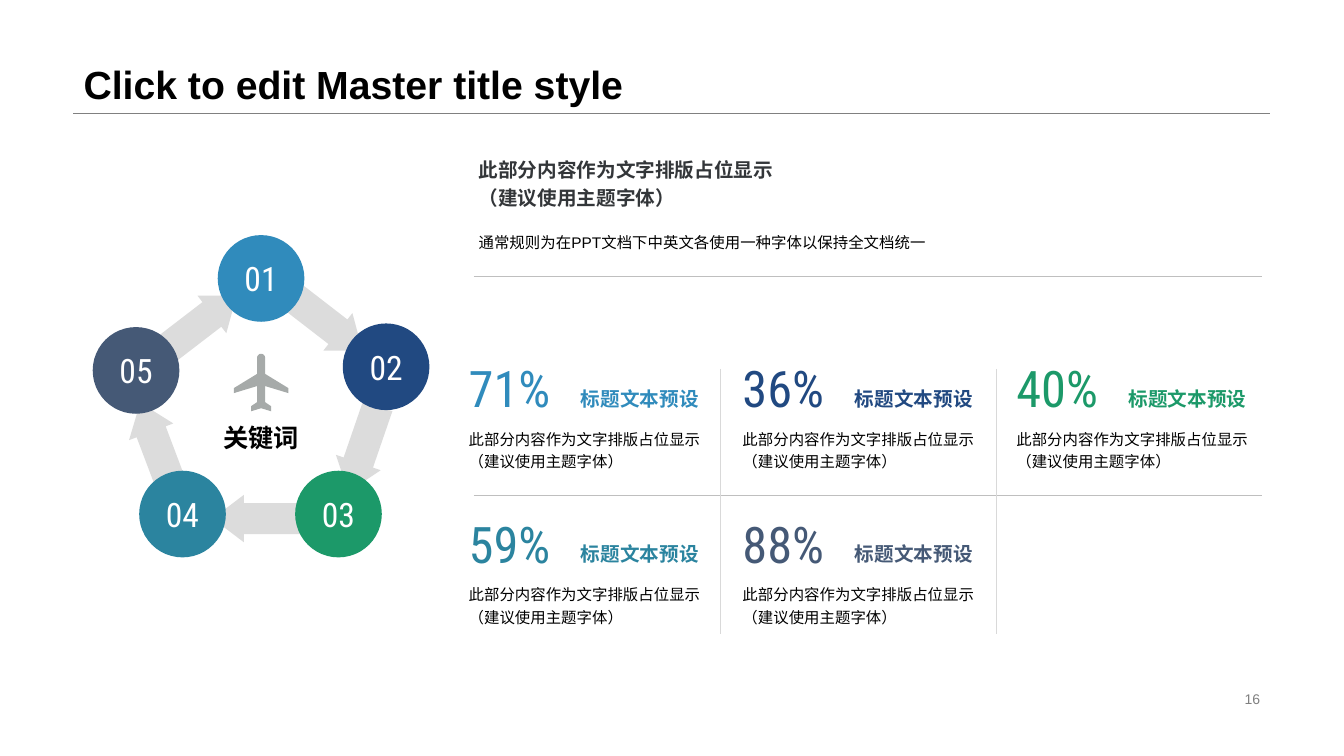
import copy

import pptx
import pptx.dml.color
import pptx.enum.shapes
import pptx.enum.text
import pptx.oxml.ns
import pptx.util

Pt = pptx.util.Pt
RGB = pptx.dml.color.RGBColor.from_string
SHAPE = pptx.enum.shapes.MSO_SHAPE
ALIGN = pptx.enum.text.PP_ALIGN
ANCHOR = pptx.enum.text.MSO_ANCHOR
qn = pptx.oxml.ns.qn

COLORS = {
    "black": "000000", "white": "FFFFFF", "heading": "333639",
    "number": "808080", "arrow": "DCDCDC", "plane": "A6AAA9",
    "rule": "BFBFBF", "divider": "D9D9D9",
    "01": "308BBC", "02": "214981", "03": "1C9969", "04": "2B849F", "05": "455976",
}
NUMERALS = "Roboto Condensed"
PLACEHOLDER = "此部分内容作为文字排版占位显示\v（建议使用主题字体）"


def write(sp, text, size, color="black", font="Arial", bold=False, align=ALIGN.LEFT,
          anchor=ANCHOR.TOP, spacing=None, wrap=True, inset=(7.2, 3.6)):
    tf = sp.text_frame
    tf.word_wrap = wrap
    tf.auto_size = pptx.enum.text.MSO_AUTO_SIZE.NONE
    tf.vertical_anchor = anchor
    tf.margin_left = tf.margin_right = Pt(inset[0])
    tf.margin_top = tf.margin_bottom = Pt(inset[1])
    p = tf.paragraphs[0]
    p.text = text
    p.alignment = align
    if spacing:
        p.line_spacing = spacing
    for r in p.runs:
        r.font.size = Pt(size)
        r.font.name = font
        r.font.bold = bold
        r.font.color.rgb = RGB(COLORS[color])
    # Line breaks take the size of the text around them
    for br in p._p.findall(qn("a:br")):
        br.append(copy.deepcopy(p.runs[0]._r.rPr))


def paint(sp, color):
    sp.shadow.inherit = False
    sp.fill.solid()
    sp.fill.fore_color.rgb = RGB(COLORS[color])
    sp.line.fill.background()


prs = pptx.Presentation()
prs.slide_width, prs.slide_height = Pt(960), Pt(540)
s = prs.slides.add_slide(prs.slide_layouts[5])

# Title and slide number
title = s.shapes.title
title.left, title.top, title.width, title.height = Pt(52.5), Pt(0), Pt(855), Pt(80.6)
write(title, "Click to edit Master title style", 28, bold=True,
      anchor=ANCHOR.BOTTOM, spacing=0.9)
sp = s.shapes.add_textbox(Pt(678.2), Pt(491), Pt(229), Pt(16.6))
write(sp, "16", 10, "number", align=ALIGN.RIGHT, anchor=ANCHOR.MIDDLE)

# Arrows of the cycle: centre and rotation
arrow_w, arrow_h = 64.8, 33.8
for x, y, angle in [(184.3, 370.4, 180), (233.3, 230.8, 37.7), (143.3, 230.8, 322.5),
                    (259.2, 320.8, 109), (111.6, 317.9, 249.3)]:
    sp = s.shapes.add_shape(SHAPE.RIGHT_ARROW, Pt(x - arrow_w / 2), Pt(y - arrow_h / 2),
                            Pt(arrow_w), Pt(arrow_h))
    sp.adjustments[0], sp.adjustments[1] = 0.655, 0.657
    sp.rotation = angle
    paint(sp, "arrow")

# Numbered circles
diameter = 61.9
for label, x, y in [("05", 97.2, 264.6), ("01", 186.5, 198.9), ("02", 275.8, 262),
                    ("03", 241.8, 367.2), ("04", 130.4, 367.2)]:
    sp = s.shapes.add_shape(SHAPE.OVAL, Pt(x - diameter / 2), Pt(y - diameter / 2),
                            Pt(diameter), Pt(diameter))
    paint(sp, label)
    write(sp, label, 24, "white", NUMERALS, align=ALIGN.CENTER,
          anchor=ANCHOR.MIDDLE, wrap=False)

# Plane: right half of the outline, mirrored about its axis
axis = 186.5
half = [(0, 252.7), (1.1, 252.9), (2, 253.6), (2.7, 254.5), (2.9, 255.6), (2.9, 267.1),
        (19.4, 277.2), (19.4, 280.8), (2.9, 275.8), (2.9, 287.3), (7.2, 290.2),
        (7.2, 293.8), (0, 291.6)]
outline = half + [(-dx, y) for dx, y in half[-2:0:-1]]
points = [(Pt(axis + dx), Pt(y)) for dx, y in outline]
builder = s.shapes.build_freeform(*points[0])
builder.add_line_segments(points[1:], close=True)
paint(builder.convert_to_shape(), "plane")

sp = s.shapes.add_textbox(Pt(150.5), Pt(292.3), Pt(72), Pt(41))
write(sp, "关键词", 18, bold=True, align=ALIGN.CENTER, anchor=ANCHOR.MIDDLE, wrap=False)

# Introduction
sp = s.shapes.add_textbox(Pt(334.8), Pt(105.8), Pt(341.3), Pt(57.6))
write(sp, PLACEHOLDER, 14, "heading", bold=True, spacing=1.2)
sp = s.shapes.add_textbox(Pt(334.8), Pt(162.7), Pt(341.3), Pt(33.1))
write(sp, "通常规则为在PPT文档下中英文各使用一种字体以保持全文档统一", 11)

# Figures in a grid of three columns
for i, (key, percent) in enumerate([("01", "71%"), ("02", "36%"), ("03", "40%"),
                                    ("04", "59%"), ("05", "88%")]):
    row, col = divmod(i, 3)
    x, y = 334.8 + col * 195.6, 255.4 + row * 111
    sp = s.shapes.add_textbox(Pt(x), Pt(y + 49.2), Pt(175.7), Pt(37.4))
    write(sp, PLACEHOLDER, 11, spacing=1.2, inset=(0, 0))
    sp = s.shapes.add_textbox(Pt(x), Pt(y), Pt(132.5), Pt(53.3))
    write(sp, percent, 36, key, NUMERALS, inset=(0, 0))
    sp = s.shapes.add_textbox(Pt(x + 80.2), Pt(y + 18.8), Pt(95), Pt(20.9))
    write(sp, "标题文本预设", 14, key, bold=True, anchor=ANCHOR.MIDDLE,
          wrap=False, inset=(0, 0))

# Rules and dividers
for x1, y1, x2, y2, color in [(52.5, 80.8, 907.2, 80.8, "number"),
                              (338.4, 197.3, 901.4, 197.3, "rule"),
                              (338.4, 353.5, 901.4, 353.5, "rule"),
                              (514.3, 263.5, 514.3, 452.9, "divider"),
                              (711.5, 263.5, 711.5, 452.9, "divider")]:
    line = s.shapes.add_connector(pptx.enum.shapes.MSO_CONNECTOR.STRAIGHT,
                                  Pt(x1), Pt(y1), Pt(x2), Pt(y2))
    line.line.color.rgb = RGB(COLORS[color])
    line.line.width = Pt(0.25)
    line._element.spPr.append(pptx.oxml.parse_xml(
        '<a:effectLst xmlns:a="http://schemas.openxmlformats.org/drawingml/2006/main"/>'))

prs.save("out.pptx")
